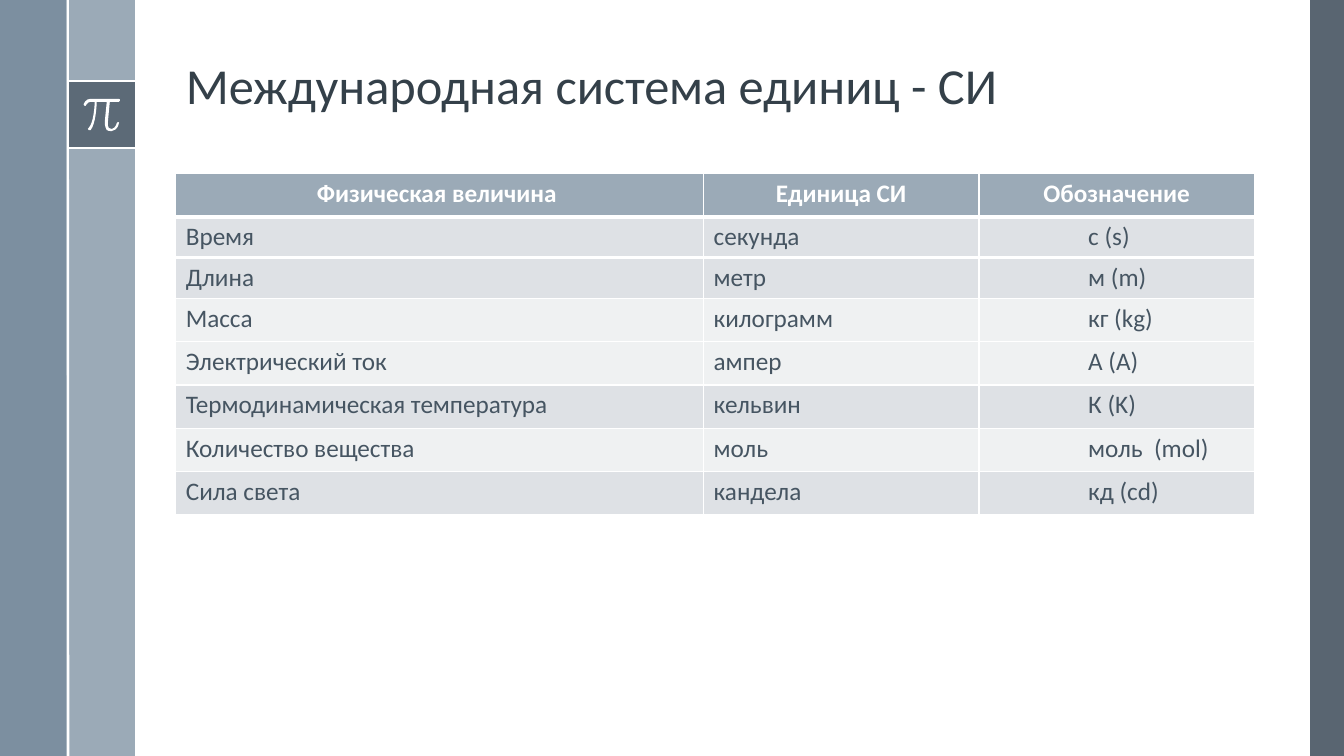
from dataclasses import dataclass

from lxml.etree import SubElement
from pptx import Presentation
from pptx.dml.color import RGBColor
from pptx.enum.shapes import MSO_CONNECTOR, MSO_SHAPE
from pptx.enum.text import MSO_ANCHOR, MSO_AUTO_SIZE, PP_ALIGN
from pptx.oxml.ns import qn
from pptx.util import Cm, Pt

FONT = "Calibri"
WHITE, SLATE, MIST, STEEL = "FFFFFF", "475562", "9BAAB7", "6A8093"
TITLE_INK, BODY_INK = "344049", "465562"
DARK_BAND, LIGHT_BAND = "DEE1E5", "EFF1F2"
SLIDE_HEIGHT = 19.05
CONTENT_LEFT, CONTENT_WIDTH = 4.43, 27.18

Point = tuple[float, float]


@dataclass
class Panel:
    left: float
    top: float
    width: float
    height: float
    color: str
    opacity: int = 100


@dataclass
class Rule:
    start: Point
    end: Point


@dataclass
class Unit:
    quantity: str
    name: str
    symbol: str
    band: str


PANELS = [
    Panel(33.02, 0, 0.85, SLIDE_HEIGHT, SLATE, 90),
    Panel(1.7, 0, 1.7, SLIDE_HEIGHT, MIST),
    Panel(0, 0, 1.68, SLIDE_HEIGHT, STEEL, 88),
    Panel(1.7, 2.05, 1.7, 1.68, SLATE, 75),
]
RULES = [
    Rule((1.7, 2.05), (3.4, 2.05)),
    Rule((1.7, 3.73), (3.4, 3.73)),
    Rule((1.71, 0), (1.72, SLIDE_HEIGHT)),
]
HEADINGS = ["Физическая величина ", "Единица СИ", "Обозначение"]
UNITS = [
    Unit("Время", "секунда", "с (s)", DARK_BAND),
    Unit("Длина", "метр", "м (m)", DARK_BAND),
    Unit("Масса", "килограмм", "кг (kg)", LIGHT_BAND),
    Unit("Электрический ток", "ампер", "А (A)", LIGHT_BAND),
    Unit("Термодинамическая температура", "кельвин", "К (K)", DARK_BAND),
    Unit("Количество вещества", "моль", "моль  (mol)", LIGHT_BAND),
    Unit("Сила света", "кандела", "кд (cd)", DARK_BAND),
]
COLUMN_WIDTHS = [13.3, 6.94, 6.94]
ROW_HEIGHTS = [1.09, 1, 1] + [1.09] * 5
THICK_BOUNDARIES = (1, 2)

# Pi outline in hundredths of an inch: one point is a straight step,
# three points are a cubic curve
PI_UNIT = 0.0254
PI_START = (118, 98)
PI_STEPS = [
    [(90, 98)],
    [(85, 98), (83, 103), (83, 104)],
    [(83, 104), (83, 105), (84, 105)],
    [(85, 105)],
    [(85, 105), (87, 101), (90, 101)],
    [(94, 101)],
    [(94, 105), (93, 122), (88, 127)],
    [(87, 127), (87, 128), (88, 129)],
    [(90, 129)],
    [(95, 123), (96, 105), (96, 101)],
    [(106, 101)],
    [(104, 121)],
    [(104, 122), (104, 126), (106, 129)],
    [(107, 130), (109, 130), (110, 130)],
    [(111, 130)],
    [(117, 129), (118, 123), (118, 122)],
    [(119, 122), (118, 121), (117, 121)],
    [(117, 121), (116, 121), (116, 122)],
    [(116, 122), (115, 127), (111, 128)],
    [(110, 128), (109, 128), (108, 127)],
    [(107, 126), (107, 123), (107, 122)],
    [(109, 101)],
    [(118, 101)],
    [(119, 101), (119, 100), (119, 100)],
    [(119, 99), (119, 98), (118, 98)],
]


def rgb(color: str) -> RGBColor:
    return RGBColor.from_string(color)


def paint(shape, color: str, opacity: int = 100) -> None:
    shape.shadow.inherit = False
    shape.line.fill.background()
    shape.fill.solid()
    shape.fill.fore_color.rgb = rgb(color)
    if opacity < 100:
        tint = shape.fill._xPr.find(qn("a:solidFill"))[0]
        SubElement(tint, qn("a:alpha"), val=str(opacity * 1000))


def add_panel(slide, panel: Panel) -> None:
    bar = slide.shapes.add_shape(
        MSO_SHAPE.RECTANGLE, Cm(panel.left), Cm(panel.top), Cm(panel.width), Cm(panel.height)
    )
    paint(bar, panel.color, panel.opacity)


def add_rule(slide, rule: Rule) -> None:
    ends = [Cm(value) for value in rule.start + rule.end]
    divider = slide.shapes.add_connector(MSO_CONNECTOR.STRAIGHT, *ends)
    divider.line.color.rgb = rgb(WHITE)
    divider.line.width = Pt(1.5)
    SubElement(divider._element.spPr, qn("a:effectLst"))


def add_pi(slide) -> None:
    corners = [PI_START] + [step[-1] for step in PI_STEPS]
    start, *rest = [(Cm(x * PI_UNIT), Cm(y * PI_UNIT)) for x, y in corners]
    builder = slide.shapes.build_freeform(*start)
    builder.add_line_segments(rest, close=False)
    pi = builder.convert_to_shape()
    # Bend the straight segments that have control points
    segments = list(pi._element.iter(qn("a:lnTo")))
    outline = segments[0].getparent()
    for segment, step in zip(segments, PI_STEPS):
        if len(step) == 3:
            segment.tag = qn("a:cubicBezTo")
            segment.remove(segment[0])
            for x, y in step:
                local_x, local_y = Cm(x * PI_UNIT) - pi.left, Cm(y * PI_UNIT) - pi.top
                SubElement(segment, qn("a:pt"), x=str(local_x), y=str(local_y))
    SubElement(outline, qn("a:close"))
    paint(pi, WHITE)


def add_run(paragraph, text: str, size: float, color: str, bold: bool = False) -> None:
    run = paragraph.add_run()
    run.text = text
    run.font.name = FONT
    run.font.size = Pt(size)
    run.font.bold = bold
    run.font.color.rgb = rgb(color)


def format_title(slide, text: str) -> None:
    title = slide.shapes.title
    title.left, title.top = Cm(CONTENT_LEFT), Cm(0.5)
    title.width, title.height = Cm(CONTENT_WIDTH), Cm(3.43)
    frame = title.text_frame
    frame.word_wrap = True
    frame.auto_size = MSO_AUTO_SIZE.NONE
    frame.vertical_anchor = MSO_ANCHOR.MIDDLE
    paragraph = frame.paragraphs[0]
    paragraph.alignment = PP_ALIGN.LEFT
    paragraph.line_spacing = 0.9
    add_run(paragraph, text, 36, TITLE_INK)


def format_cell(cell, row: int, fill: str) -> None:
    top, bottom = (3 if edge in THICK_BOUNDARIES else 0.96 for edge in (row, row + 1))
    for side, width in (("L", 0.96), ("R", 0.96), ("T", top), ("B", bottom)):
        border = SubElement(cell._tc.get_or_add_tcPr(), qn(f"a:ln{side}"), w=str(Pt(width)))
        SubElement(SubElement(border, qn("a:solidFill")), qn("a:srgbClr"), val=WHITE)
    cell.fill.solid()
    cell.fill.fore_color.rgb = rgb(fill)


def add_units_table(slide) -> None:
    units_table = slide.shapes.add_table(
        len(ROW_HEIGHTS), len(COLUMN_WIDTHS), Cm(CONTENT_LEFT), Cm(4.37),
        Cm(CONTENT_WIDTH), Cm(sum(ROW_HEIGHTS)),
    ).table
    for column, width in zip(units_table.columns, COLUMN_WIDTHS):
        column.width = Cm(width)
    for row, height in zip(units_table.rows, ROW_HEIGHTS):
        row.height = Cm(height)
    # Header row, then unit rows with the symbols indented
    rows = [(HEADINGS, MIST)] + [((u.quantity, u.name, u.symbol), u.band) for u in UNITS]
    for row, (texts, fill) in enumerate(rows):
        for column, text in enumerate(texts):
            cell = units_table.cell(row, column)
            format_cell(cell, row, fill)
            paragraph = cell.text_frame.paragraphs[0]
            if row == 0:
                paragraph.alignment = PP_ALIGN.CENTER
            elif column == 2:
                paragraph._p.get_or_add_pPr().set("marL", str(Cm(2.5)))
            add_run(paragraph, text, 18, BODY_INK if row else WHITE, bold=row == 0)


def main() -> None:
    deck = Presentation()
    deck.slide_width, deck.slide_height = Cm(33.87), Cm(SLIDE_HEIGHT)
    slide = deck.slides.add_slide(deck.slide_layouts[5])
    # Side decoration
    for panel in PANELS:
        add_panel(slide, panel)
    for rule in RULES:
        add_rule(slide, rule)
    add_pi(slide)
    # Content
    format_title(slide, "Международная система единиц - СИ")
    add_units_table(slide)
    deck.save("out.pptx")


if __name__ == "__main__":
    main()
